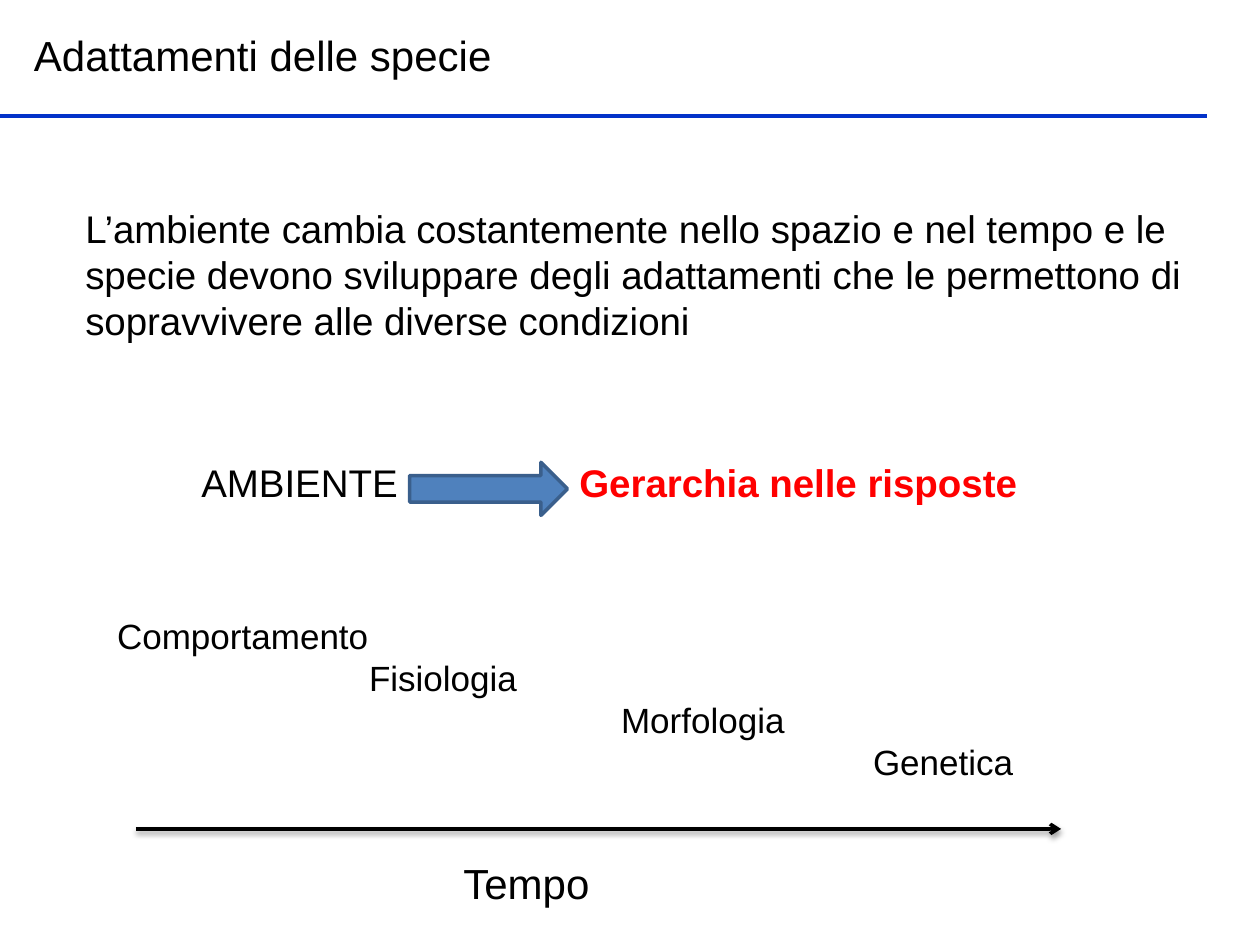
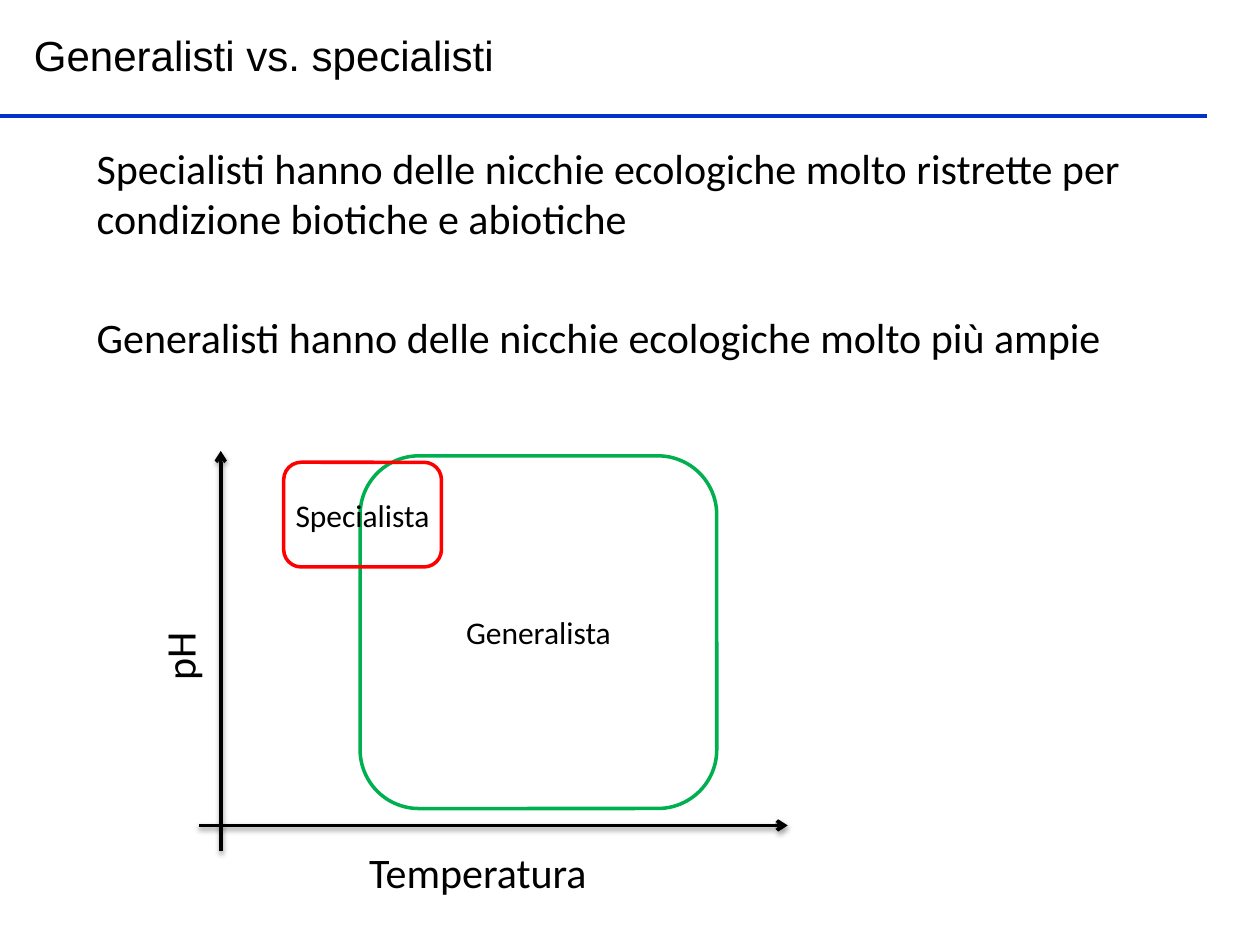
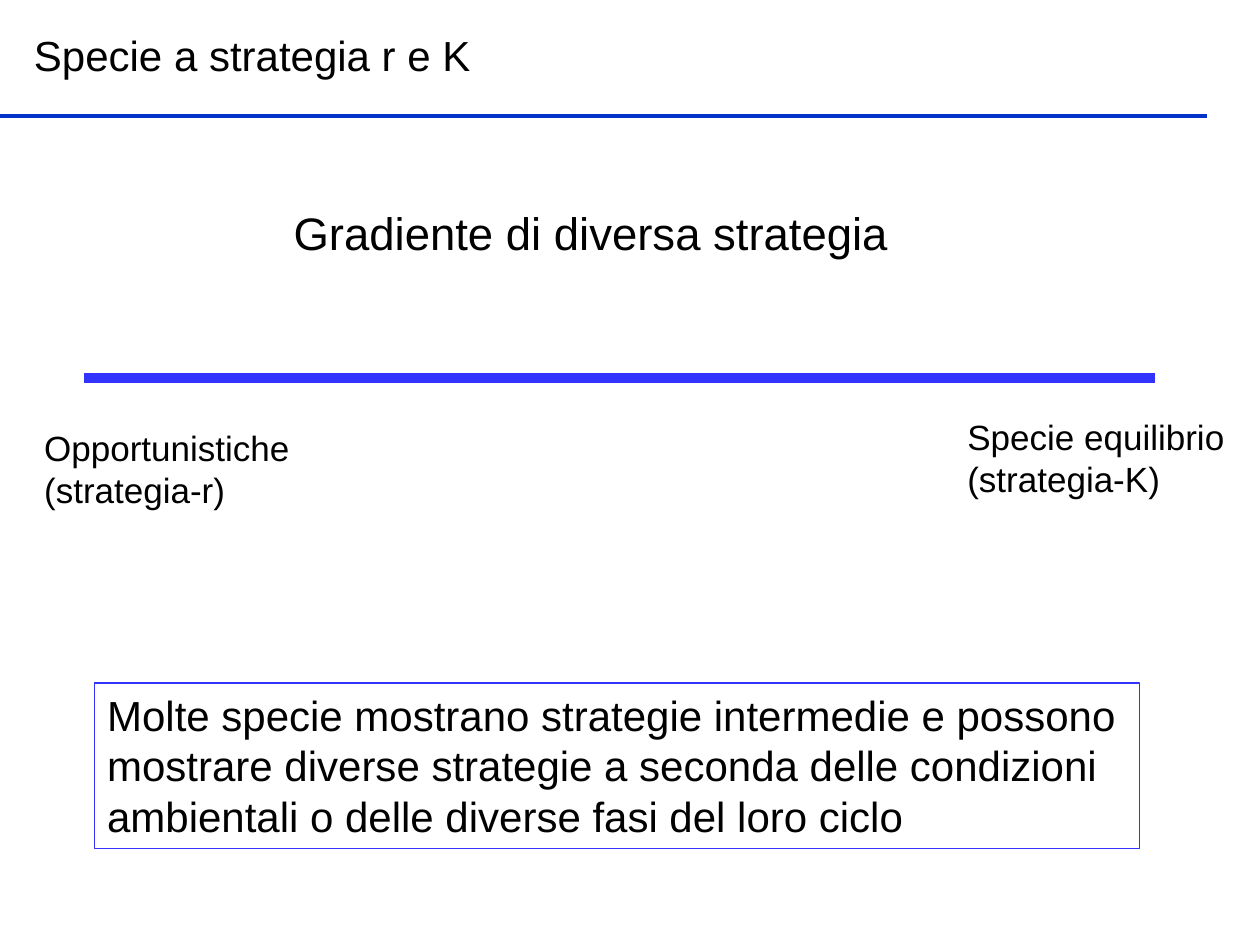
from pptx import Presentation
from pptx.dml.color import RGBColor
from pptx.enum.shapes import MSO_CONNECTOR, MSO_SHAPE
from pptx.enum.text import MSO_ANCHOR, MSO_AUTO_SIZE, PP_ALIGN
from pptx.oxml import parse_xml
from pptx.oxml.ns import nsdecls
from pptx.util import Cm, Pt

LEFT, CENTER = PP_ALIGN.LEFT, PP_ALIGN.CENTER
TOP, MIDDLE = MSO_ANCHOR.TOP, MSO_ANCHOR.MIDDLE
FIXED = MSO_AUTO_SIZE.NONE
STRAIGHT = MSO_CONNECTOR.STRAIGHT
ROUND, ARROW, RECT = MSO_SHAPE.ROUNDED_RECTANGLE, MSO_SHAPE.RIGHT_ARROW, MSO_SHAPE.RECTANGLE


class Theme:
    black = RGBColor.from_string("000000")
    red = RGBColor.from_string("FF0000")
    green = RGBColor.from_string("00B050")
    rule = RGBColor.from_string("0332C9")
    bright = RGBColor.from_string("3333FF")
    steel = RGBColor.from_string("4F81BD")
    edge = RGBColor.from_string("3A5F8C")
    main, alt = "Arial", "Calibri"
    small, label, body, head, big = 18, 20, 22, 24, 26
    thin, stroke, thick = 0.75, 2, 6


def put(shape, text, size=Theme.head, font=Theme.main, color=Theme.black,
        bold=False, align=LEFT, anchor=TOP, wrap=True, step=0):
    """Fill a shape with text; each line is indented by one more step."""
    frame = shape.text_frame
    frame.text = text
    frame.word_wrap = wrap
    frame.auto_size = FIXED
    frame.vertical_anchor = anchor
    for i, para in enumerate(frame.paragraphs):
        para.alignment = align
        para.font.size = Pt(size)
        para.font.name = font
        para.font.bold = bold
        para.font.color.rgb = color
        if step:
            para._p.get_or_add_pPr().set("marL", str(Cm(step * i)))
    return shape


def draw(slide, ends, color=Theme.black, width=Theme.stroke, arrow=False):
    """Draw a flat line, or an arrow with a soft shadow."""
    line = slide.shapes.add_connector(STRAIGHT, *map(Cm, ends))
    line.line.color.rgb = color
    line.line.width = Pt(width)
    shade = ""
    if arrow:
        line.line._get_or_add_ln().append(
            parse_xml(f'<a:tailEnd {nsdecls("a")} type="arrow"/>'))
        shade = (f'<a:outerShdw blurRad="{Pt(3.1)}" dist="{Pt(1.6)}" dir="5400000" rotWithShape="0">'
                 '<a:srgbClr val="000000"><a:alpha val="38000"/></a:srgbClr></a:outerShdw>')
    line._element.spPr.append(
        parse_xml(f'<a:effectLst {nsdecls("a")}>{shade}</a:effectLst>'))


deck = Presentation()
deck.slide_width, deck.slide_height = Cm(25.4), Cm(19.05)

# Shared title and rule
pages = []
for name in ("Adattamenti delle specie", "Generalisti vs. specialisti",
             "Specie a strategia r e K"):
    page = deck.slides.add_slide(deck.slide_layouts[5])
    title = page.shapes.title
    title.left, title.top, title.width, title.height = map(Cm, (0.43, 0.46, 21.6, 1.27))
    put(title, name, anchor=MIDDLE)
    draw(page, (0, 2.34, 24.33, 2.34), Theme.rule)
    pages.append(page)
adapt, niche, trade = pages

# Text boxes of all slides
for page, text, box, form in (
    (adapt, "L’ambiente cambia costantemente nello spazio e nel tempo e le specie devono "
            "sviluppare degli adattamenti che le permettono di sopravvivere alle diverse condizioni",
     (1.47, 4.01, 23.93, 3.07), dict(size=Theme.body)),
    (adapt, "AMBIENTE", (3.81, 9.12, 4.5, 1.1), dict(size=Theme.body)),
    (adapt, "Gerarchia nelle risposte", (11.43, 9.12, 10, 1.1),
     dict(size=Theme.body, color=Theme.red, bold=True)),
    (adapt, "Comportamento\nFisiologia\nMorfologia\nGenetica",
     (2.11, 12.27, 21.59, 3.68), dict(size=Theme.label, step=5.08)),
    (adapt, "Tempo", (9.09, 17.15, 5.92, 1.27), dict(anchor=MIDDLE)),
    (niche, "Specialisti hanno delle nicchie ecologiche molto ristrette per "
            "condizione biotiche e abiotiche",
     (1.7, 2.74, 22.66, 2.31), dict(font=Theme.alt)),
    (niche, "Generalisti hanno delle nicchie ecologiche molto più ampie",
     (1.7, 6.15, 22.66, 1.27), dict(font=Theme.alt)),
    (niche, "Temperatura", (7.19, 16.94, 5.28, 1.27), dict(font=Theme.alt)),
    (trade, "Gradiente di diversa strategia", (5.61, 4.01, 12.62, 1.37),
     dict(size=Theme.big, align=CENTER, wrap=False)),
    (trade, "Opportunistiche\n(strategia-r)", (0.64, 8.47, 5.51, 1.96),
     dict(size=Theme.label, wrap=False)),
    (trade, "Specie equilibrio\n(strategia-K)", (19.25, 8.26, 5.74, 1.96),
     dict(size=Theme.label, wrap=False)),
):
    put(page.shapes.add_textbox(*map(Cm, box)), text, **form)

# Upright axis label
side = niche.shapes.add_textbox(*map(Cm, (0.97, 12.6, 5.28, 1.27)))
side.rotation = 270
put(side, "pH", font=Theme.alt, align=CENTER)

# Outlined shapes: block arrow, two niches, closing note
inner = dict(size=Theme.small, font=Theme.alt, align=CENTER, anchor=MIDDLE, wrap=False)
for page, kind, box, fill, edge, width, text, form in (
    (adapt, ARROW, (8.26, 9.32, 3.18, 1.07), Theme.steel, Theme.edge, Theme.stroke, "", {}),
    (niche, ROUND, (7.26, 9.19, 7.19, 7.11), None, Theme.green, Theme.stroke,
     "Generalista", inner),
    (niche, ROUND, (5.72, 9.32, 3.18, 2.11), None, Theme.red, Theme.stroke,
     "Specialista", inner),
    (trade, RECT, (1.91, 13.77, 21.06, 3.33), None, Theme.bright, Theme.thin,
     "Molte specie mostrano strategie intermedie e possono\n"
     "mostrare diverse strategie a seconda delle condizioni\n"
     "ambientali o delle diverse fasi del loro ciclo", dict(wrap=False)),
):
    shape = page.shapes.add_shape(kind, *map(Cm, box))
    shape.shadow.inherit = False
    if fill is None:
        shape.fill.background()
    else:
        shape.fill.solid()
        shape.fill.fore_color.rgb = fill
    shape.line.color.rgb = edge
    shape.line.width = Pt(width)
    if text:
        put(shape, text, **form)

# Time arrow, niche axes and gradient bar
draw(adapt, (2.74, 16.71, 21.39, 16.71), arrow=True)
draw(niche, (4.01, 16.64, 15.88, 16.64), arrow=True)
draw(niche, (4.45, 17.15, 4.45, 9.09), arrow=True)
draw(trade, (1.7, 7.62, 23.29, 7.62), Theme.bright, Theme.thick)

deck.save("out.pptx")
